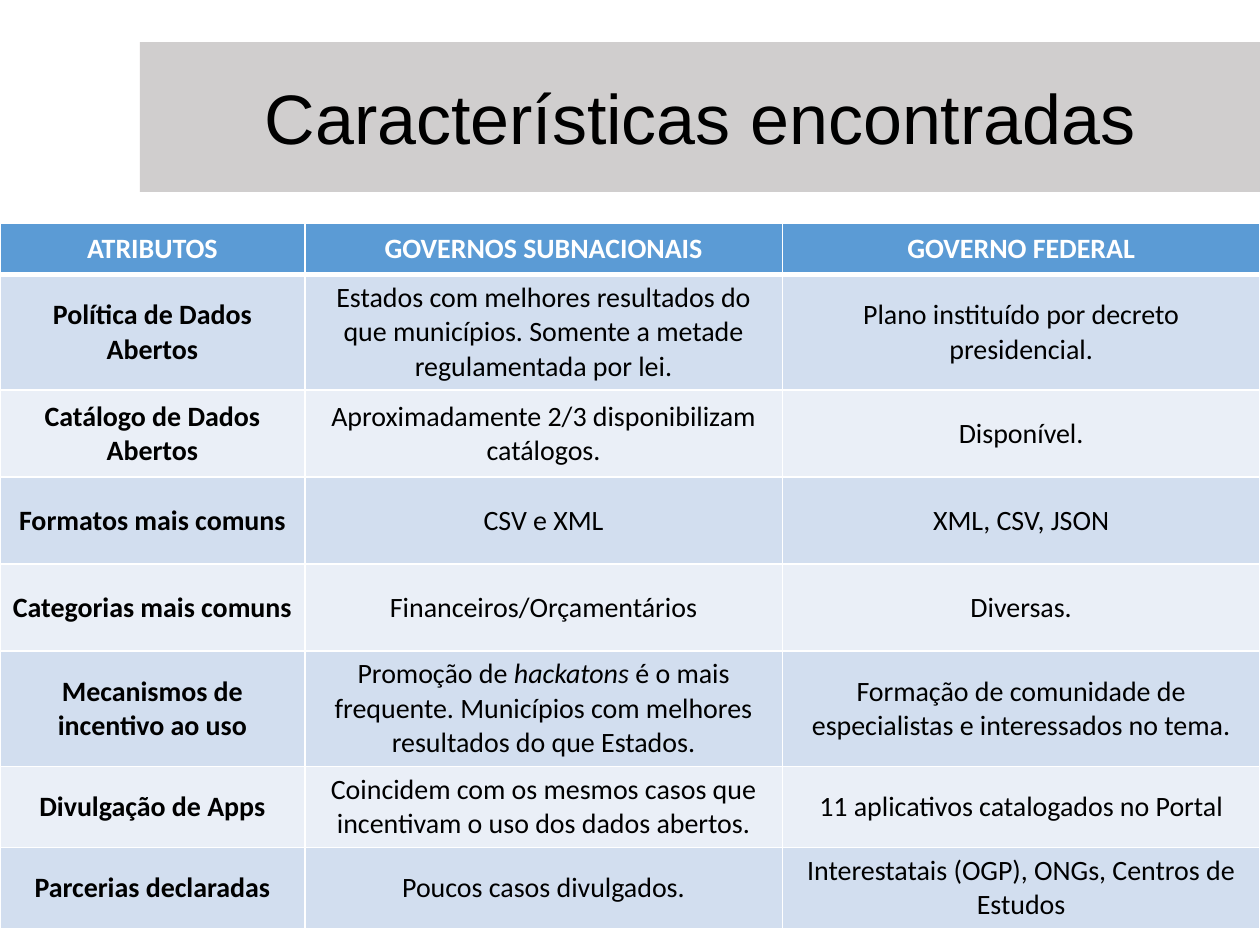
from lxml.etree import SubElement as Sub
from pptx import Presentation
from pptx.dml.color import RGBColor as RGB
from pptx.enum.shapes import MSO_SHAPE as Kind
from pptx.enum.text import MSO_ANCHOR as Anchor, PP_ALIGN as Align
from pptx.oxml.ns import qn
from pptx.util import Pt

BLACK = RGB(0x00, 0x00, 0x00)
WHITE = RGB(0xFF, 0xFF, 0xFF)
GREY = RGB(0xD0, 0xCE, 0xCE)
BLUE = RGB(0x5B, 0x9B, 0xD5)
BANDS = [RGB(0xEA, 0xEF, 0xF7), RGB(0xD2, 0xDE, 0xEF)]

COLS = [174.2, 272.9, 272.9]
ROWS = [29.5, 59, 49.7, 49.7, 49.7, 49.7, 38.2, 38.2]
CELLS = [
    ["ATRIBUTOS", "GOVERNOS SUBNACIONAIS", "GOVERNO FEDERAL"],
    ["Política de Dados Abertos",
     "Estados com melhores resultados do que municípios. "
     "Somente a metade regulamentada por lei.",
     "Plano instituído por decreto presidencial."],
    ["Catálogo de Dados Abertos",
     "Aproximadamente 2/3 disponibilizam catálogos.",
     "Disponível."],
    ["Formatos mais comuns", "CSV e XML", "XML, CSV, JSON"],
    ["Categorias mais comuns", "Financeiros/Orçamentários", "Diversas."],
    ["Mecanismos de incentivo ao uso",
     "Promoção de |hackatons |é o mais frequente. "
     "Municípios com melhores resultados do que Estados.",
     "Formação de comunidade de especialistas e interessados no tema."],
    ["Divulgação de Apps",
     "Coincidem com os mesmos casos que incentivam o uso dos dados abertos.",
     "11 aplicativos catalogados no Portal"],
    ["Parcerias declaradas", "Poucos casos divulgados.",
     "Interestatais (OGP), ONGs, Centros de Estudos"],
]


def write(frame, text, face, size, color, bold=False):
    para = frame.paragraphs[0]
    para.alignment = Align.CENTER
    for n, part in enumerate(text.split("|")):
        run = para.add_run()
        run.text = part
        font = run.font
        font.name, font.size = face, Pt(size)
        font.bold, font.italic = bold, n % 2 == 1
        font.color.rgb = color


def add_title(slide, text):
    box = slide.shapes.add_shape(Kind.RECTANGLE, Pt(80), Pt(24), Pt(640), Pt(85.7))
    box.shadow.inherit = False
    box.fill.solid()
    box.fill.fore_color.rgb = GREY
    box.line.fill.background()
    box.text_frame.word_wrap = True
    box.text_frame.vertical_anchor = Anchor.MIDDLE
    write(box.text_frame, text, "Arial", 40, BLACK)


def add_edge(cell, side, width):
    props = cell._tc.get_or_add_tcPr()
    line = Sub(props, qn("a:ln" + side), w=str(Pt(width)))
    fill = Sub(line, qn("a:solidFill"))
    Sub(fill, qn("a:srgbClr"), val=str(WHITE))


def style(cell, row, col, text):
    head = row == 0
    widths = {"L": 1, "R": 1, "T": 3 if row == 1 else 1, "B": 3 if head else 1}
    for side, width in widths.items():
        add_edge(cell, side, width)
    cell.fill.solid()
    cell.fill.fore_color.rgb = BLUE if head else BANDS[row % 2]
    cell.vertical_anchor = Anchor.MIDDLE
    write(cell.text_frame, text, "Calibri", 16,
          WHITE if head else BLACK, head or col == 0)


def add_grid(slide):
    frame = slide.shapes.add_table(len(ROWS), len(COLS), Pt(0), Pt(127.5),
                                   Pt(sum(COLS)), Pt(sum(ROWS)))
    grid = frame.table
    for col, width in zip(grid.columns, COLS):
        col.width = Pt(width)
    for row, height in zip(grid.rows, ROWS):
        row.height = Pt(height)
    for r, texts in enumerate(CELLS):
        for c, text in enumerate(texts):
            style(grid.cell(r, c), r, c, text)


def main():
    deck = Presentation()
    deck.slide_width, deck.slide_height = Pt(720), Pt(540)
    slide = deck.slides.add_slide(deck.slide_layouts[6])
    add_title(slide, "Características encontradas")
    add_grid(slide)
    deck.save("out.pptx")


if __name__ == "__main__":
    main()
